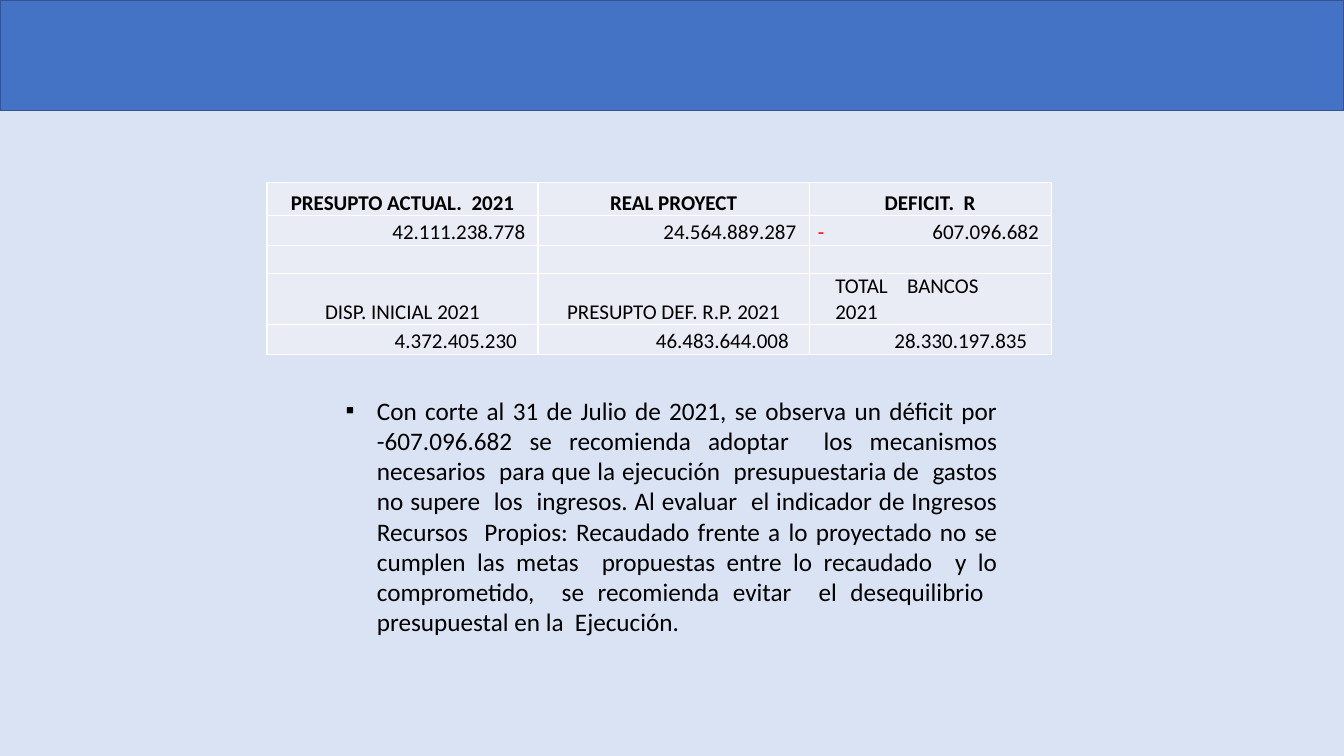
import pptx
import pptx.util
import pptx.dml.color
import pptx.enum.shapes
import pptx.enum.text
import pptx.oxml
import pptx.oxml.ns
from lxml import etree

Cm = pptx.util.Cm
Pt = pptx.util.Pt
RGBColor = pptx.dml.color.RGBColor
ALIGN = pptx.enum.text.PP_ALIGN
qn = pptx.oxml.ns.qn

PALE = RGBColor(0xDA, 0xE3, 0xF3)
BLUE = RGBColor(0x44, 0x72, 0xC4)
NAVY = RGBColor(0x32, 0x54, 0x91)
GREY = RGBColor(0xE9, 0xEB, 0xF5)
WHITE = RGBColor(0xFF, 0xFF, 0xFF)
BLACK = RGBColor(0, 0, 0)
RED = RGBColor(0xFF, 0, 0)

FONT = "Calibri"
COLS = [6.83, 6.83, 6.1]
ROWS = [0.84, 0.74, 0.71, 0.84, 0.74]

# Each cell: text, alignment, side margin, tab stop (kind, place)
CELLS = [
    [("PRESUPTO ACTUAL.  2021", ALIGN.CENTER, 0, None),
     ("REAL PROYECT", ALIGN.CENTER, 0, None),
     ("DEFICIT.  R", ALIGN.CENTER, 0, None)],
    [("42.111.238.778", ALIGN.RIGHT, 0.32, None),
     ("24.564.889.287", ALIGN.RIGHT, 0.32, None),
     ("-\t607.096.682", ALIGN.LEFT, 0.22, ("r", 5.57))],
    [("", ALIGN.CENTER, 0, None)] * 3,
    [("DISP. INICIAL 2021", ALIGN.CENTER, 0, None),
     ("PRESUPTO DEF. R.P. 2021", ALIGN.CENTER, 0, None),
     ("TOTAL\tBANCOS 2021", ALIGN.LEFT, 0.66, ("l", 1.81))],
    [("4.372.405.230", ALIGN.RIGHT, 0.53, None),
     ("46.483.644.008", ALIGN.RIGHT, 0.51, None),
     ("28.330.197.835", ALIGN.RIGHT, 0.6, None)],
]

NOTE = (
    "Con corte al 31 de Julio de 2021, se observa un déficit por -607.096.682 "
    "se recomienda adoptar  los mecanismos necesarios  para que la ejecución  "
    "presupuestaria de  gastos no supere  los  ingresos. Al evaluar  el "
    "indicador de Ingresos Recursos  Propios: Recaudado frente a lo proyectado "
    "no se cumplen las metas  propuestas entre lo recaudado  y lo "
    "comprometido,  se recomienda evitar  el desequilibrio  presupuestal en "
    "la  Ejecución."
)


def add_run(para, text, size, color=BLACK, bold=False):
    run = para.add_run()
    run.text = text
    run.font.name = FONT
    run.font.size = Pt(size)
    run.font.bold = bold
    run.font.color.rgb = color


def add_band(slide):
    band = slide.shapes.add_shape(
        pptx.enum.shapes.MSO_SHAPE.RECTANGLE, 0, 0, Cm(33.87), Cm(2.79))
    band.shadow.inherit = False
    band.fill.solid()
    band.fill.fore_color.rgb = BLUE
    band.line.color.rgb = NAVY
    band.line.width = Pt(1)


def add_edges(cell):
    props = cell._tc.get_or_add_tcPr()
    for side in ("lnL", "lnR", "lnT", "lnB"):
        line = etree.SubElement(props, qn("a:" + side), w=str(Pt(1)))
        fill = etree.SubElement(line, qn("a:solidFill"))
        etree.SubElement(fill, qn("a:srgbClr"), val=str(WHITE))


def add_tab(para, kind, place):
    tabs = etree.SubElement(para._p.get_or_add_pPr(), qn("a:tabLst"))
    etree.SubElement(tabs, qn("a:tab"), pos=str(Cm(place)), algn=kind)


def fill_cell(cell, data, bold):
    text, align, side, tab = data
    add_edges(cell)
    cell.fill.solid()
    cell.fill.fore_color.rgb = GREY
    cell.margin_left = cell.margin_right = Cm(side)
    cell.margin_top = cell.margin_bottom = 0
    cell.vertical_anchor = pptx.enum.text.MSO_ANCHOR.BOTTOM
    para = cell.text_frame.paragraphs[0]
    para.alignment = align
    if tab:
        add_tab(para, *tab)
    if text.startswith("-"):
        add_run(para, "-", 15, RED)
        text = text[1:]
    if text:
        add_run(para, text, 15, bold=bold)
    else:
        etree.SubElement(para._p, qn("a:endParaRPr"), sz="1500")


def add_grid(slide):
    grid = slide.shapes.add_table(
        len(ROWS), len(COLS), Cm(6.73), Cm(4.6),
        Cm(sum(COLS)), Cm(sum(ROWS))).table
    grid.first_row = grid.horz_banding = False
    for col, width in zip(grid.columns, COLS):
        col.width = Cm(width)
    for r, height in enumerate(ROWS):
        grid.rows[r].height = Cm(height)
        for c, data in enumerate(CELLS[r]):
            fill_cell(grid.cell(r, c), data, bold=r == 0)


def add_note(slide):
    box = slide.shapes.add_textbox(Cm(8.46), Cm(9.83), Cm(16.93), Cm(6.4))
    frame = box.text_frame
    frame.word_wrap = True
    frame.auto_size = pptx.enum.text.MSO_AUTO_SIZE.SHAPE_TO_FIT_TEXT
    para = frame.paragraphs[0]
    para.alignment = ALIGN.JUSTIFY
    props = para._p.get_or_add_pPr()
    props.set("marL", str(Cm(0.79)))
    props.set("indent", str(Cm(-0.79)))
    etree.SubElement(props, qn("a:buFont"), typeface="Arial")
    etree.SubElement(props, qn("a:buChar"), char="▪")
    add_run(para, NOTE, 18)


def main():
    deck = pptx.Presentation()
    deck.slide_width, deck.slide_height = Cm(33.87), Cm(19.05)
    slide = deck.slides.add_slide(deck.slide_layouts[6])
    slide.background.fill.solid()
    slide.background.fill.fore_color.rgb = PALE
    add_band(slide)
    add_grid(slide)
    add_note(slide)
    deck.save("out.pptx")


if __name__ == "__main__":
    main()
